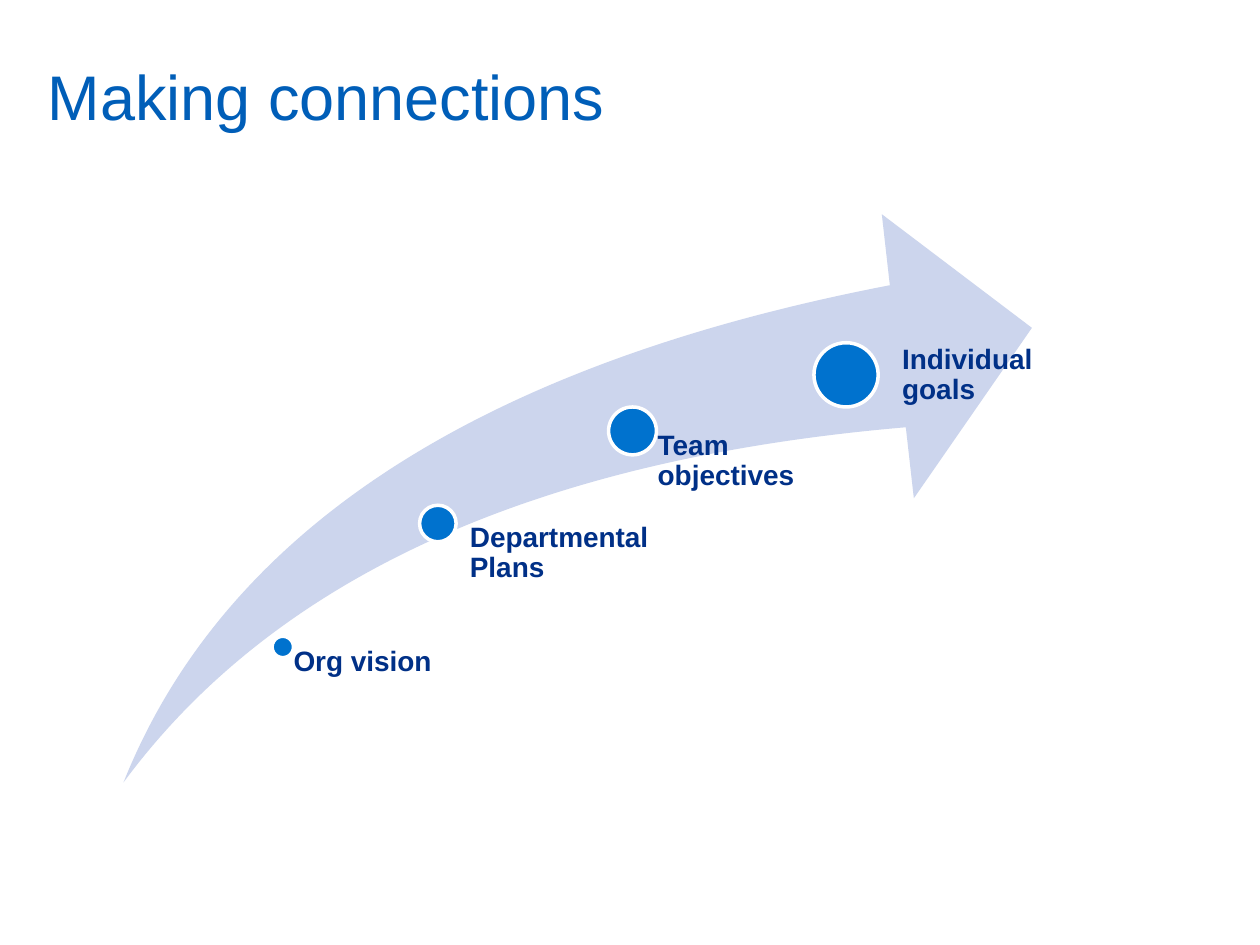
from dataclasses import dataclass

import pptx
import pptx.dml.color
import pptx.enum.shapes
import pptx.enum.text
import pptx.util
from pptx.dml.color import RGBColor
from pptx.enum.shapes import MSO_SHAPE

TITLE_BLUE = RGBColor(0x00, 0x5E, 0xB8)
LABEL_NAVY = RGBColor(0x00, 0x30, 0x87)
MARKER_BLUE = RGBColor(0x00, 0x72, 0xCE)
ARROW_LAVENDER = RGBColor(0xCC, 0xD5, 0xED)
WHITE = RGBColor(0xFF, 0xFF, 0xFF)
FONT_NAME = "Arial"

SLIDE_WIDTH = pptx.util.Inches(10)
SLIDE_HEIGHT = pptx.util.Inches(7.5)
COLUMN = SLIDE_WIDTH / 10
ROW = SLIDE_HEIGHT / 7.5


@dataclass(frozen=True)
class Area:
    column: float
    row: float
    columns: float
    rows: float

    def lengths(self) -> tuple[int, int, int, int]:
        return (
            round(self.column * COLUMN),
            round(self.row * ROW),
            round(self.columns * COLUMN),
            round(self.rows * ROW),
        )


@dataclass(frozen=True)
class Milestone:
    text: str
    marker: Area
    label: Area
    indent: float


ARROW_AREA = Area(0.98, 1.7, 7.21, 4.51)
TITLE_AREA = Area(0.28, 0.29, 9.07, 0.94)
MILESTONES = (
    Milestone("Org vision", Area(2.16, 5.05, 0.17, 0.17), Area(2.24, 5.14, 1.23, 1.07), 0.09),
    Milestone("Departmental Plans", Area(3.33, 4.01, 0.29, 0.29), Area(3.58, 4.15, 2, 2.06), 0.15),
    Milestone("Team objectives", Area(4.83, 3.23, 0.38, 0.38), Area(5.02, 3.42, 1.51, 2.78), 0.2),
    Milestone("Individual goals", Area(6.46, 2.72, 0.51, 0.51), Area(6.89, 2.74, 1.51, 3.23), 0.27),
)


def style_font(font: pptx.text.text.Font, size: float, color: RGBColor, bold: bool) -> None:
    font.name = FONT_NAME
    font.size = pptx.util.Pt(size)
    font.bold = bold
    font.color.rgb = color


def add_title(slide: pptx.slide.Slide, text: str) -> None:
    title = slide.shapes.title
    title.left, title.top, title.width, title.height = TITLE_AREA.lengths()
    title.text_frame.text = text
    title.text_frame.vertical_anchor = pptx.enum.text.MSO_ANCHOR.MIDDLE
    paragraph = title.text_frame.paragraphs[0]
    paragraph.alignment = pptx.enum.text.PP_ALIGN.LEFT
    style_font(paragraph.font, 36, TITLE_BLUE, False)


def add_arrow(shapes: pptx.shapes.shapetree.GroupShapes) -> None:
    arrow = shapes.add_shape(MSO_SHAPE.SWOOSH_ARROW, *ARROW_AREA.lengths())
    arrow.adjustments[0] = 0.25
    arrow.adjustments[1] = 0.25
    arrow.shadow.inherit = False
    arrow.fill.solid()
    arrow.fill.fore_color.rgb = ARROW_LAVENDER
    arrow.line.fill.background()


def add_milestone(shapes: pptx.shapes.shapetree.GroupShapes, milestone: Milestone) -> None:
    marker = shapes.add_shape(MSO_SHAPE.OVAL, *milestone.marker.lengths())
    marker.shadow.inherit = False
    marker.fill.solid()
    marker.fill.fore_color.rgb = MARKER_BLUE
    marker.line.color.rgb = WHITE
    marker.line.width = pptx.util.Pt(2)

    label = shapes.add_textbox(*milestone.label.lengths())
    frame = label.text_frame
    frame.word_wrap = True
    frame.margin_left = round(milestone.indent * COLUMN)
    frame.margin_top = frame.margin_right = frame.margin_bottom = 0
    frame.text = milestone.text
    paragraph = frame.paragraphs[0]
    paragraph.line_spacing = 0.9
    style_font(paragraph.font, 16, LABEL_NAVY, True)


def main() -> None:
    presentation = pptx.Presentation()
    presentation.slide_width = SLIDE_WIDTH
    presentation.slide_height = SLIDE_HEIGHT
    title_only = presentation.slide_layouts.get_by_name("Title Only")
    slide = presentation.slides.add_slide(title_only)

    add_title(slide, "Making connections")
    diagram = slide.shapes.add_group_shape()
    add_arrow(diagram.shapes)
    for milestone in MILESTONES:
        add_milestone(diagram.shapes, milestone)

    presentation.save("out.pptx")


if __name__ == "__main__":
    main()
